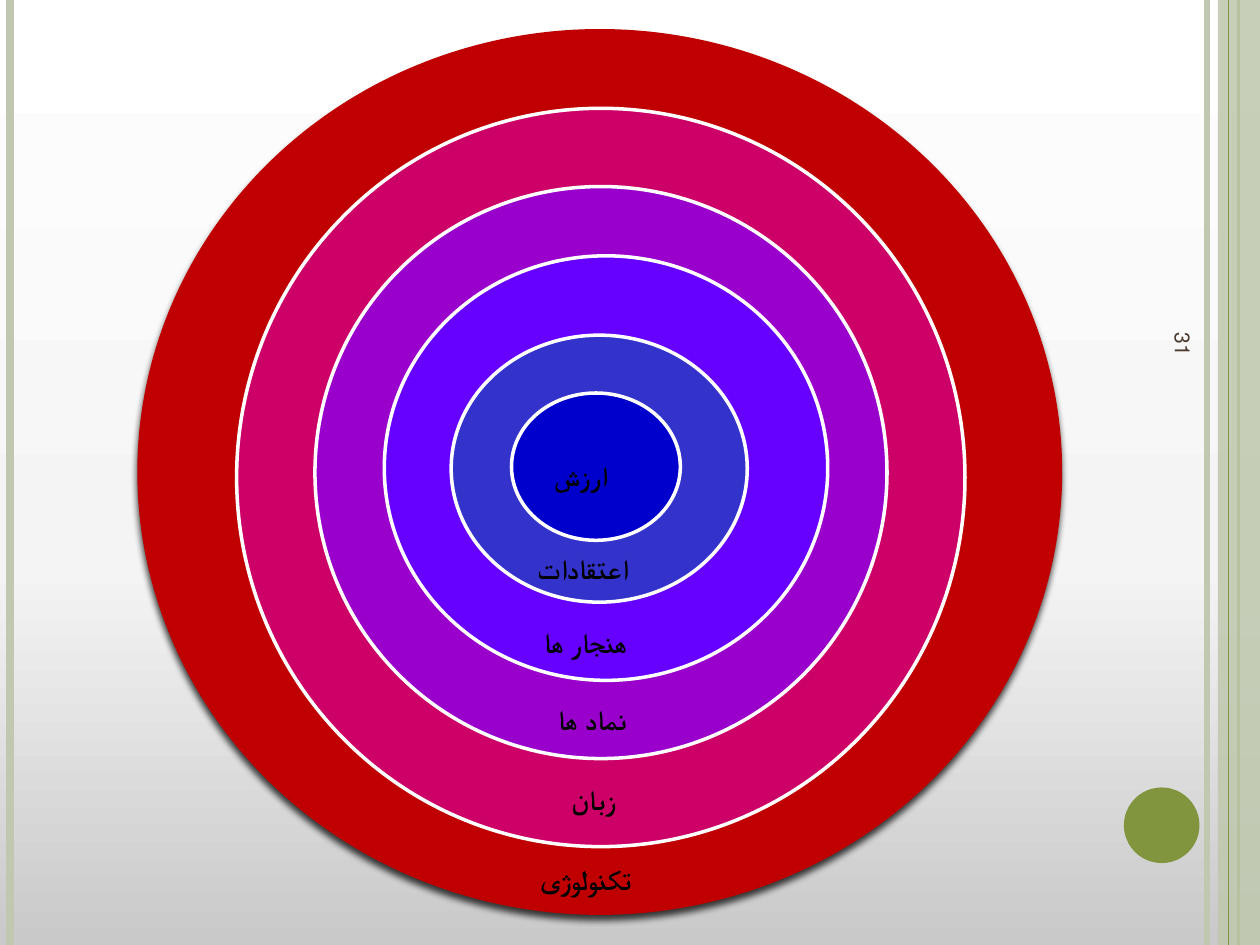
import copy

import pptx
import pptx.dml.color
import pptx.enum.shapes
import pptx.enum.text
import pptx.oxml
import pptx.oxml.ns
import pptx.util

Pt = pptx.util.Pt
RGB = pptx.dml.color.RGBColor.from_string
SHAPE = pptx.enum.shapes.MSO_SHAPE
ALIGN = pptx.enum.text.PP_ALIGN
ANCHOR = pptx.enum.text.MSO_ANCHOR
AUTOFIT = pptx.enum.text.MSO_AUTO_SIZE
qn = pptx.oxml.ns.qn
NS = pptx.oxml.ns.nsdecls("a")

COLORS = {
    "sage": "C0C8AF", "olive": "80953D", "white": "FFFFFF", "black": "000000",
    "brown": "4E3B30", "red": "C00000", "pink": "CC0066", "purple": "9900CC",
    "violet": "6600FF", "indigo": "3333CC", "blue": "0000CC",
    "bg_low": "C9C9C9", "bg_mid": "F4F4F4",
}


def add_shape(kind, box, color, outline=None):
    sp = s.shapes.add_shape(kind, *[Pt(v) for v in box])
    sp.shadow.inherit = False
    sp.fill.solid()
    sp.fill.fore_color.rgb = RGB(COLORS[color])
    if outline:
        sp.line.color.rgb = RGB(COLORS[outline])
        sp.line.width = Pt(2)
    else:
        sp.line.fill.background()
    return sp


def add_text(text, box, size, font, color, bold):
    sp = s.shapes.add_textbox(*[Pt(v) for v in box])
    tf = sp.text_frame
    tf.word_wrap = True
    p = tf.paragraphs[0]
    p.alignment = ALIGN.LEFT
    r = p.add_run()
    r.text = text
    fmt = {"size": Pt(size), "name": font, "bold": bold}
    for name, value in fmt.items():
        setattr(r.font, name, value)
    r.font.color.rgb = RGB(COLORS[color])
    return sp


prs = pptx.Presentation()
prs.slide_width, prs.slide_height = Pt(720), Pt(540)
s = prs.slides.add_slide(prs.slide_layouts[6])

# Background gradient, dark at the bottom
fill = s.background.fill
fill.gradient()
fill.gradient_angle = 90
gs_list = s.element.find(".//" + qn("a:gsLst"))
gs_list.insert(1, copy.deepcopy(gs_list[0]))
stops = [(0, "bg_low"), (0.4, "bg_mid"), (1, "white")]
for stop, (position, color) in zip(fill.gradient_stops, stops):
    stop.position = position
    stop.color.rgb = RGB(COLORS[color])

# Side stripes: x, colour, width
for x, color, width in [(689.76, "sage", 3), (5.76, "sage", 4.5),
                        (707.76, "olive", 1.5)]:
    c = s.shapes.add_connector(pptx.enum.shapes.MSO_CONNECTOR.STRAIGHT,
                               Pt(x), 0, Pt(x), Pt(540))
    c.line.color.rgb = RGB(COLORS[color])
    c.line.width = Pt(width)
    c.element.spPr.append(pptx.oxml.parse_xml(f"<a:effectLst {NS}/>"))

# Translucent right band, its thin line and the dot
band = add_shape(SHAPE.RECTANGLE, (696, 0, 24, 540), "sage")
band.element.spPr.find(".//" + qn("a:srgbClr")).append(
    pptx.oxml.parse_xml(f'<a:alpha {NS} val="87000"/>'))
c = s.shapes.add_connector(pptx.enum.shapes.MSO_CONNECTOR.STRAIGHT,
                           Pt(702), 0, Pt(702), Pt(540))
c.line.color.rgb = RGB(COLORS["olive"])
c.line.width = Pt(0.75)
c.element.spPr.append(pptx.oxml.parse_xml(f"<a:effectLst {NS}/>"))
add_shape(SHAPE.OVAL, (642.24, 450, 43.2, 43.2), "olive")

# Outer disc with a soft shadow
disc = add_shape(SHAPE.OVAL, (78.5, 16.6, 528.5, 506.2), "red")
disc.element.spPr.find(qn("a:effectLst")).append(pptx.oxml.parse_xml(
    f'<a:outerShdw {NS} blurRad="{Pt(4)}" dist="{Pt(4)}" dir="5400000" rotWithShape="0">'
    f'<a:srgbClr val="{COLORS["black"]}"><a:alpha val="74000"/></a:srgbClr></a:outerShdw>'))

# Inner rings, largest first
rings = [
    ("pink", (135.2, 61.9, 416.2, 421.9)),
    ("purple", (180, 106.6, 326.9, 326.9)),
    ("violet", (219.6, 146.2, 253.4, 242.6)),
    ("indigo", (257.8, 191.5, 169.2, 152.6)),
    ("blue", (292.3, 224.6, 96.5, 84.2)),
]
for color, box in rings:
    add_shape(SHAPE.OVAL, box, color, "white")

# Ring labels: text, left, top, width
labels = [
    ("تکنولوژی", 301.7, 489.6, 112.3),
    ("ارزش", 309.6, 258.5, 67.7),
    ("اعتقادات", 300.2, 311.8, 86.4),
    ("هنجار ها", 303.8, 354.2, 110.2),
    ("نماد ها", 311.8, 398.2, 84.2),
    ("زبان", 319.7, 443.5, 112.3),
]
for text, x, y, width in labels:
    sp = add_text(text, (x, y, width, 26.6), 16, "Cambria", "black", True)
    sp.text_frame.auto_size = AUTOFIT.SHAPE_TO_FIT_TEXT

# Slide number, turned along the right edge
sp = add_text("31", (550.1, 294.5, 252, 28.8), 12, "Arial", "brown", False)
sp.rotation = 90
sp.text_frame.vertical_anchor = ANCHOR.MIDDLE
sp.text_frame.paragraphs[0]._p.get_or_add_pPr().set("rtl", "1")

prs.save("out.pptx")
